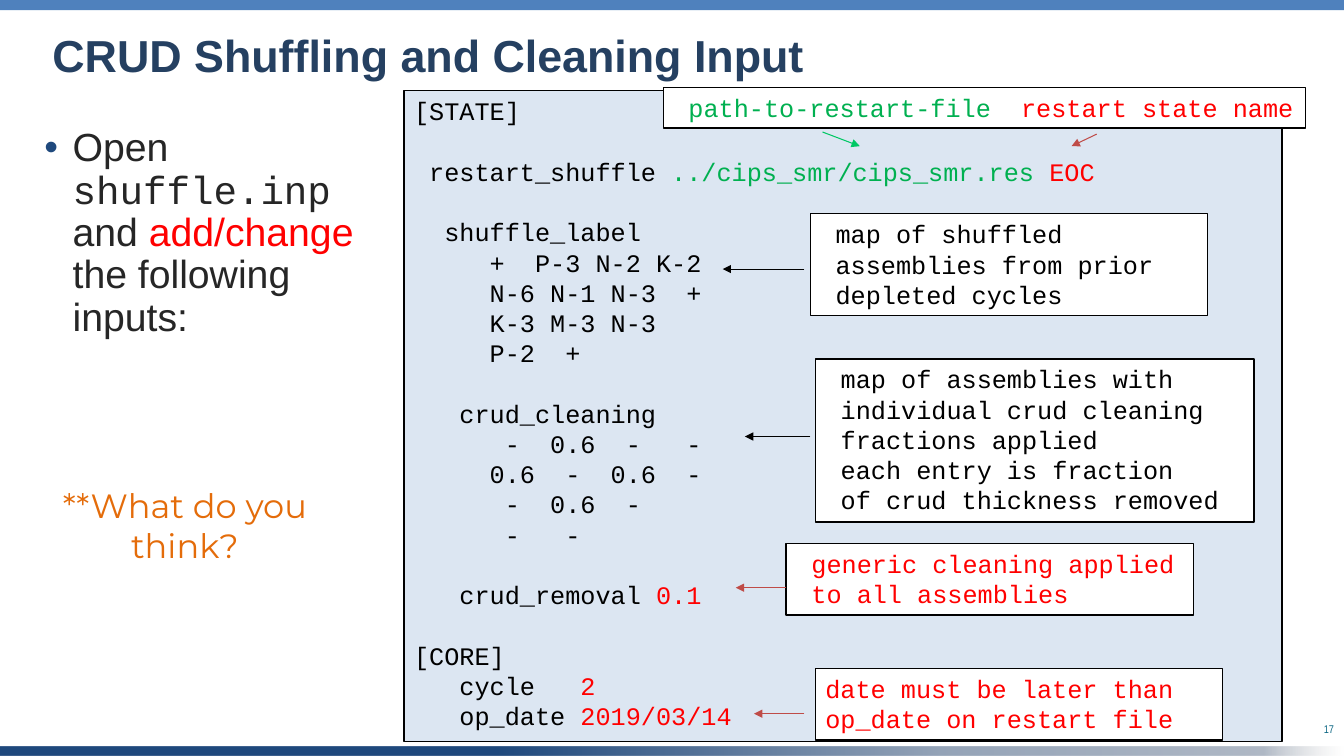
"""Build the slide on CRUD shuffling and cleaning input."""
from lxml.etree import SubElement
from pptx import Presentation
from pptx.dml.color import RGBColor
from pptx.enum.shapes import MSO_CONNECTOR, MSO_SHAPE
from pptx.enum.text import MSO_ANCHOR, MSO_AUTO_SIZE, PP_ALIGN
from pptx.oxml.ns import qn
from pptx.util import Pt

COLORS = {
    "black": "000000", "white": "FFFFFF", "red": "FF0000", "green": "00B050",
    "title": "254061", "body": "262626", "bullet": "1F497D", "question": "E46C0A",
    "number": "096582", "bar": "4F81BD", "code": "DCE6F2",
    "red_arrow": "BF4C48", "green_arrow": "00C864",
}
CODE_FONT = {"name": "Courier New", "size": Pt(18), "bold": False}


def write_lines(shape, lines, font_format, frame_format, paragraph_format):
    """Fill a shape with lines, each a list of (text, color, optional font name)."""
    frame = shape.text_frame
    frame_values = {"word_wrap": True, "auto_size": MSO_AUTO_SIZE.NONE,
                    "vertical_anchor": MSO_ANCHOR.TOP, **frame_format}
    for name, value in frame_values.items():
        setattr(frame, name, value)
    for index, line in enumerate(lines):
        paragraph = frame.paragraphs[0] if index == 0 else frame.add_paragraph()
        paragraph_values = {"alignment": PP_ALIGN.LEFT, "space_before": Pt(0), **paragraph_format}
        for name, value in paragraph_values.items():
            setattr(paragraph, name, value)
        for name, value in font_format.items():
            setattr(paragraph.font, name, value)
        for text, color, *font_name in line:
            run = paragraph.add_run()
            run.text = text
            run_values = {**font_format, **({"name": font_name[0]} if font_name else {})}
            for name, value in run_values.items():
                setattr(run.font, name, value)
            run.font.color.rgb = RGBColor.from_string(COLORS[color])


def add_box(left, top, width, height, fill, line=None):
    """Add a plain rectangle, outlined when a line color is given."""
    shape = slide.shapes.add_shape(MSO_SHAPE.RECTANGLE, Pt(left), Pt(top), Pt(width), Pt(height))
    shape.shadow.inherit = False
    shape.fill.solid()
    shape.fill.fore_color.rgb = RGBColor.from_string(COLORS[fill])
    if line:
        shape.line.color.rgb = RGBColor.from_string(COLORS[line])
        shape.line.width = Pt(1)
    else:
        shape.line.fill.background()
    return shape


presentation = Presentation()
presentation.slide_width = Pt(960)
presentation.slide_height = Pt(540)
slide = presentation.slides.add_slide(presentation.slide_layouts[1])

add_box(0, 0, 960, 7.2, "bar")
bottom_bar = add_box(0, 533.2, 960, 6.8, "bar")
bottom_bar.fill.gradient()
bottom_bar.fill.gradient_angle = 0
stop_list = bottom_bar._element.spPr.find(qn("a:gradFill")).find(qn("a:gsLst"))
for stop in list(stop_list):
    stop_list.remove(stop)
for percent, color, alpha in [(37, "1F497D", 100), (70, "95A4B8", 100),
                              (94, "B0B9C6", 100), (100, "DBDBDB", 0)]:
    stop = SubElement(stop_list, qn("a:gs"), pos=str(percent * 1000))
    stop_color = SubElement(stop, qn("a:srgbClr"), val=color)
    SubElement(stop_color, qn("a:alpha"), val=str(alpha * 1000))

number_box = slide.shapes.add_textbox(Pt(730), Pt(512.6), Pt(230), Pt(17.3))
write_lines(number_box, [[("17", "number")]], {"name": "Arial Narrow", "size": Pt(8)},
            {}, {"alignment": PP_ALIGN.RIGHT})

title = slide.shapes.title
body = slide.placeholders[1]
for placeholder, bounds in [(title, (30.2, 21.6, 875.5, 67.7)), (body, (28.1, 87.8, 249.1, 311.8))]:
    for name, value in zip(("left", "top", "width", "height"), bounds):
        setattr(placeholder, name, Pt(value))

write_lines(title, [[("CRUD Shuffling and Cleaning Input", "title")]],
            {"name": "Arial", "size": Pt(32), "bold": True},
            {"margin_left": Pt(7.2), "margin_right": Pt(7.2),
             "margin_top": Pt(4.3), "margin_bottom": Pt(4.3)},
            {"line_spacing": 0.85})

bullet_properties = body.text_frame.paragraphs[0]._p.get_or_add_pPr()
bullet_properties.set("marL", str(Pt(20.2)))
bullet_properties.set("indent", str(-Pt(20.2)))
bullet_color = SubElement(bullet_properties, qn("a:buClr"))
SubElement(bullet_color, qn("a:srgbClr"), val=COLORS["bullet"])
SubElement(bullet_properties, qn("a:buFont"), typeface="Arial")
SubElement(bullet_properties, qn("a:buChar"), char="•")
write_lines(body, [[("Open ", "body"), ("shuffle.inp ", "body", "Courier New"), ("and ", "body"),
                    ("add/change ", "red"), ("the following inputs:", "body")]],
            {"name": "Arial", "size": Pt(28)},
            {f"margin_{side}": Pt(3.6) for side in ("left", "right", "top", "bottom")},
            {"line_spacing": 0.9})

code_lines = [
    [("[STATE]", "black")],
    [],
    [(" restart_shuffle ", "black"), ("../cips_smr/cips_smr.res ", "green"), ("EOC", "red")],
    [],
    [("  shuffle_label", "black")],
    [("     +  P-3 N-2 K-2", "black")],
    [("     N-6 N-1 N-3  +", "black")],
    [("     K-3 M-3 N-3", "black")],
    [("     P-2  +", "black")],
    [],
    [("   crud_cleaning", "black")],
    [("      -  0.6  -   -", "black")],
    [("     0.6  -  0.6  -", "black")],
    [("      -  0.6  -", "black")],
    [("      -   -", "black")],
    [],
    [("   crud_removal ", "black"), ("0.1", "red")],
    [],
    [("[CORE]", "black")],
    [("   cycle   ", "black"), ("2", "red")],
    [("   op_date ", "black"), ("2019/03/14", "red")],
]
code_box = add_box(288.7, 64.8, 627.1, 465.1, "code", "black")
write_lines(code_box, code_lines, CODE_FONT, {}, {})

callouts = [
    ((582.5, 256.3, 313.2, 116.6), 18, "black",
     ["map of assemblies with", "individual crud cleaning", "fractions applied",
      "each entry is fraction", "of crud thickness removed"]),
    ((561.6, 388.1, 290.9, 51.1), 18, "red", ["generic cleaning applied", "to all assemblies"]),
    ((578.9, 152.6, 283.7, 72.7), 18, "black",
     ["map of shuffled", "assemblies from prior", "depleted cycles"]),
    ((582.5, 477.4, 290.9, 51.1), 7.2, "red", ["date must be later than op_date on restart file"]),
]
for bounds, margin, color, lines in callouts:
    callout = add_box(*bounds, "white", "black")
    write_lines(callout, [[(line, color)] for line in lines], CODE_FONT,
                {"margin_left": Pt(margin)}, {})

restart_box = add_box(473.8, 62.6, 458.6, 28.8, "white", "black")
restart_properties = restart_box.text_frame.paragraphs[0]._p.get_or_add_pPr()
tab_list = SubElement(restart_properties, qn("a:tabLst"))
SubElement(tab_list, qn("a:tab"), pos=str(Pt(237.6)), algn="l")
write_lines(restart_box, [[("path-to-restart-file\t", "green"), ("restart state name", "red")]],
            CODE_FONT, {"margin_left": Pt(18)}, {})

arrows = [
    (783.4, 95.8, 765.4, 104.4, "red_arrow"),
    (587.5, 94.3, 614.2, 104.4, "green_arrow"),
    (574.6, 509.8, 538.6, 509.8, "red_arrow"),
    (561.6, 419.8, 525.6, 419.8, "red_arrow"),
    (574.6, 192.2, 516.2, 192.2, "black"),
    (578.9, 311.8, 532.1, 311.8, "black"),
]
for *points, color in arrows:
    arrow = slide.shapes.add_connector(MSO_CONNECTOR.STRAIGHT, *[Pt(point) for point in points])
    arrow.line.color.rgb = RGBColor.from_string(COLORS[color])
    arrow.line.width = Pt(0.75)
    SubElement(arrow.line._get_or_add_ln(), qn("a:tailEnd"), type="triangle")
    SubElement(arrow._element.spPr, qn("a:effectLst"))

question_box = slide.shapes.add_textbox(Pt(18), Pt(342.7), Pt(228.2), Pt(65.5))
write_lines(question_box, [[("**What do you think?", "question")]],
            {"name": "Montserrat", "size": Pt(24)}, {}, {"alignment": PP_ALIGN.CENTER})

presentation.save("out.pptx")
